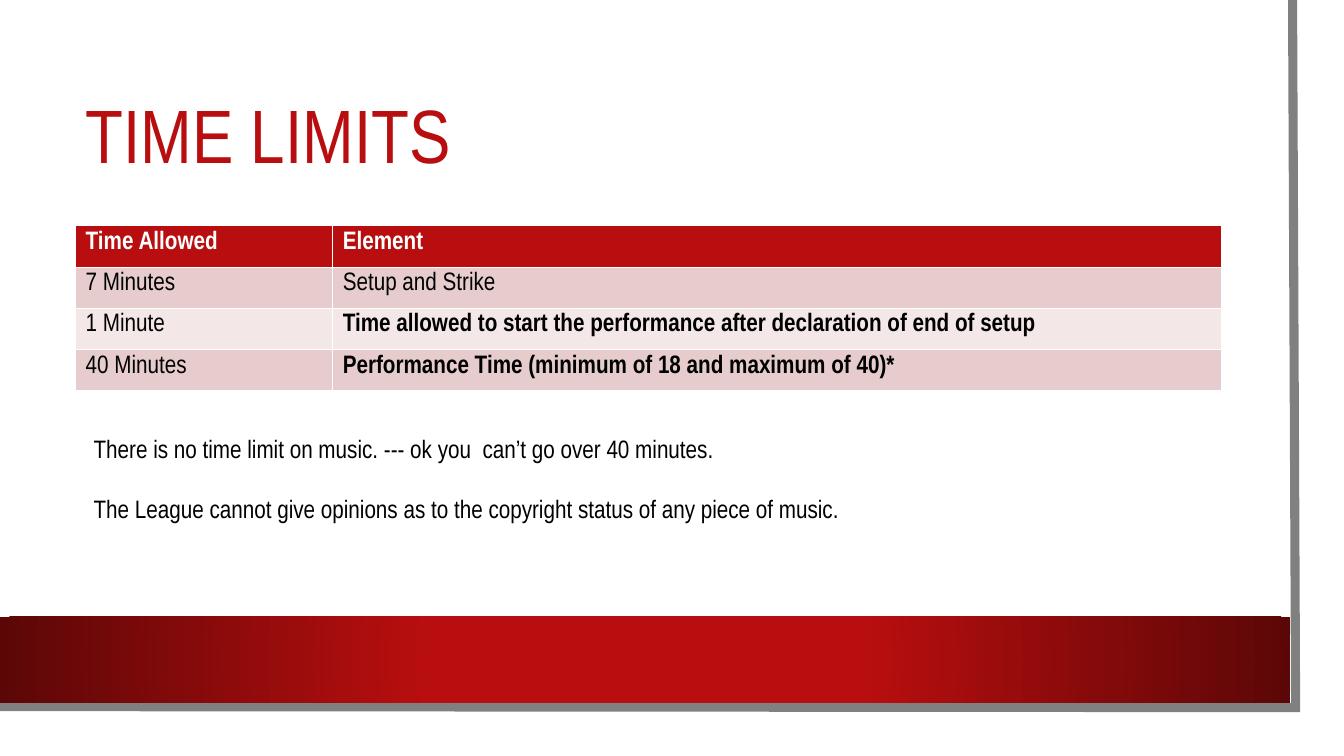
from lxml.etree import SubElement
from pptx import Presentation
from pptx.dml.color import RGBColor
from pptx.enum.shapes import MSO_SHAPE
from pptx.enum.text import MSO_ANCHOR, MSO_AUTO_SIZE, PP_ALIGN
from pptx.oxml import parse_xml
from pptx.oxml.ns import nsdecls, qn
from pptx.util import Inches, Pt

FONT = "Arial Narrow"
RED, DARK_RED, WHITE, BLACK, GREY = "B80E0F", "5C0707", "FFFFFF", "000000", "808080"
ROW_FILLS = ["F3E7E7", "E6CCCC"]

TITLE = "TIME LIMITS"
LIMITS = [
    ("Time Allowed", "Element"),
    ("7 Minutes", "Setup and Strike"),
    ("1 Minute", "Time allowed to start the performance after declaration of end of setup"),
    ("40 Minutes", "Performance Time (minimum of 18 and maximum of 40)*"),
]
BOLD_ELEMENT_ROWS = {2, 3}
COLUMN_WIDTHS = [2.55, 8.82]
ROW_HEIGHT = 0.41
NOTES = [
    "There is no time limit on music. --- ok you  can’t go over 40 minutes.",
    "The League cannot give opinions as to the copyright status of any piece of music.",
]
FRAME_POINTS = [(12.82, 0), (12.85, 7.02), (-0.03, 7.01)]


def color(value):
    return RGBColor.from_string(value)


def set_font(paragraph, size, value, bold=False):
    font = paragraph.font
    font.name, font.size, font.bold = FONT, Pt(size), bold
    font.color.rgb = color(value)


def add_block(slide, left, top, width, height):
    block = slide.shapes.add_shape(
        MSO_SHAPE.RECTANGLE, Inches(left), Inches(top), Inches(width), Inches(height))
    block.shadow.inherit = False
    block.line.fill.background()
    block.fill.solid()
    block.fill.fore_color.rgb = color(WHITE)
    return block


def add_backdrop(slide):
    add_block(slide, 0, 0, 13.1, 7.27)

    corners = [(Inches(x), Inches(y)) for x, y in FRAME_POINTS]
    builder = slide.shapes.build_freeform(*corners[0])
    builder.add_line_segments(corners[1:], close=False)
    frame = builder.convert_to_shape()
    frame.shadow.inherit = False
    frame.fill.background()
    frame.line.color.rgb = color(GREY)
    frame.line.width = Pt(6.5)
    SubElement(frame.line._get_or_add_ln(), qn("a:miter"), lim="800000")

    band = add_block(slide, 0, 6.12, 12.8, 0.85)
    solid = band.fill._xPr.find(qn("a:solidFill"))
    gradient = parse_xml(
        f'<a:gradFill {nsdecls("a")} rotWithShape="1"><a:gsLst>'
        f'<a:gs pos="34000"><a:srgbClr val="{RED}"/></a:gs>'
        f'<a:gs pos="100000"><a:srgbClr val="{DARK_RED}"/></a:gs></a:gsLst>'
        '<a:path path="circle"><a:fillToRect l="50000" t="50000" r="50000" b="50000"/>'
        '</a:path></a:gradFill>')
    solid.getparent().replace(solid, gradient)


def add_title(slide):
    title = slide.shapes.title
    slide.shapes._spTree.append(title._element)
    title.left, title.top = Inches(0.75), Inches(0.75)
    title.width, title.height = Inches(11.37), Inches(1.26)
    frame = title.text_frame
    frame.text = TITLE
    frame.auto_size = MSO_AUTO_SIZE.NONE
    frame.vertical_anchor = MSO_ANCHOR.MIDDLE
    heading = frame.paragraphs[0]
    heading.alignment = PP_ALIGN.LEFT
    heading.line_spacing = 0.9
    set_font(heading, 54, RED)


def add_limits(slide):
    table = slide.shapes.add_table(
        len(LIMITS), len(COLUMN_WIDTHS), Inches(0.75), Inches(2.24),
        Inches(sum(COLUMN_WIDTHS)), Inches(ROW_HEIGHT * len(LIMITS))).table
    for column, width in zip(table.columns, COLUMN_WIDTHS):
        column.width = Inches(width)
    for r, limit in enumerate(LIMITS):
        header = r == 0
        for c, text in enumerate(limit):
            cell = table.cell(r, c)
            cell.text = text
            cell.fill.solid()
            cell.fill.fore_color.rgb = color(RED if header else ROW_FILLS[r % 2])
            bold = header or (c == 1 and r in BOLD_ELEMENT_ROWS)
            set_font(cell.text_frame.paragraphs[0], 18, WHITE if header else BLACK, bold)


def add_notes(slide):
    frame = slide.shapes.add_textbox(
        Inches(0.83), Inches(4.25), Inches(11.29), Inches(1.01)).text_frame
    frame.word_wrap = True
    frame.text = "\n".join(NOTES)
    for i, paragraph in enumerate(frame.paragraphs):
        if i:
            paragraph.space_before = Pt(21.5)
        set_font(paragraph, 18, BLACK)


def main():
    deck = Presentation()
    deck.slide_width, deck.slide_height = Inches(13.33), Inches(7.5)
    slide = deck.slides.add_slide(deck.slide_layouts[5])
    add_backdrop(slide)
    add_title(slide)
    add_limits(slide)
    add_notes(slide)
    deck.save("out.pptx")


if __name__ == "__main__":
    main()
